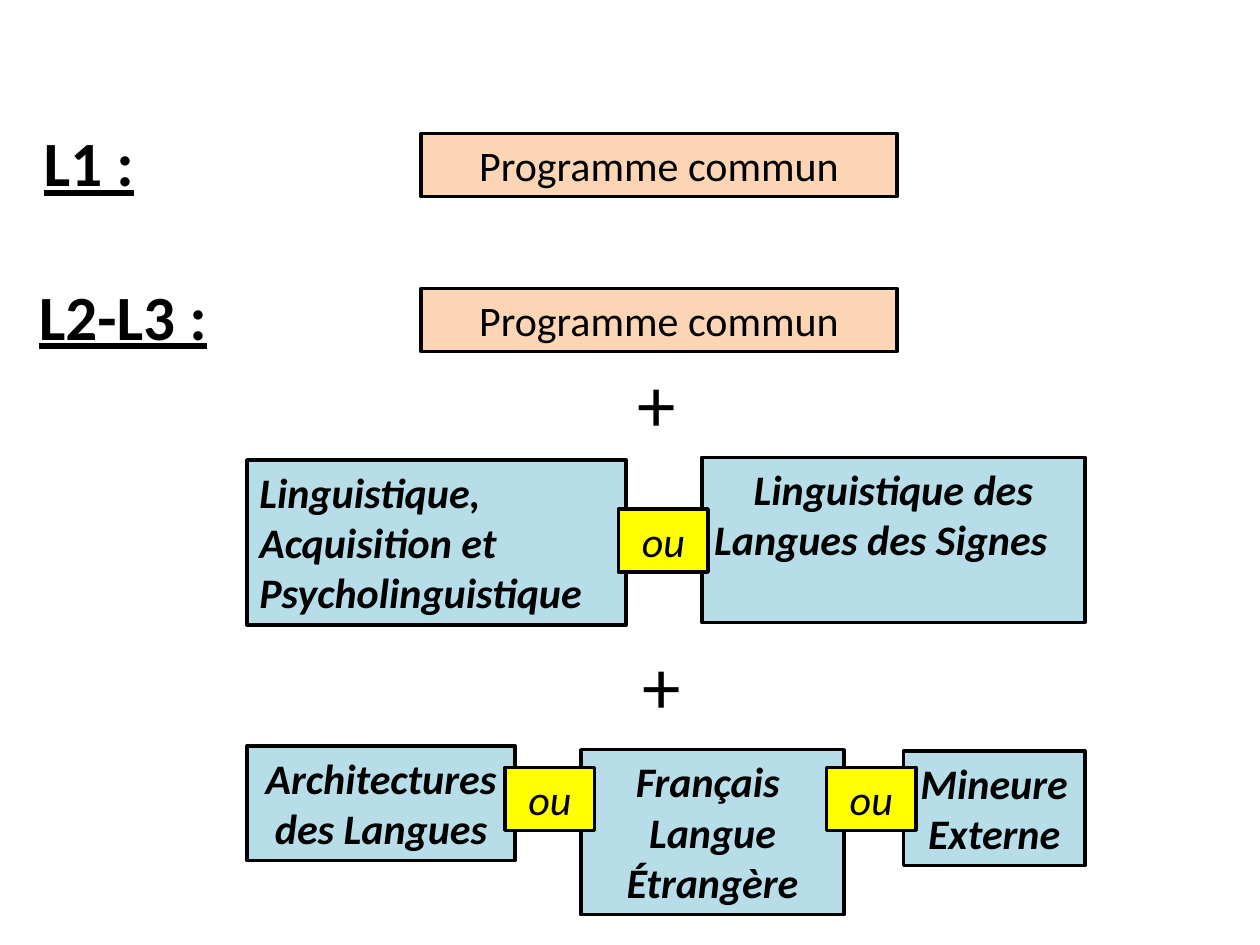
from pptx import Presentation
from pptx.dml.color import RGBColor
from pptx.enum.shapes import MSO_SHAPE as Shape
from pptx.enum.text import MSO_ANCHOR as Anchor, MSO_AUTO_SIZE as Auto, PP_ALIGN as Align
from pptx.util import Inches, Pt

WIDE, HIGH = Inches(10), Inches(7.5)
COLS, ROWS = 100, 75
BLACK, WHITE = "000000", "FFFFFF"
PEACH, BLUE, YELLOW = "FCD5B5", "B7DEE8", "FFFF00"


def paint(color, code):
    color.rgb = RGBColor.from_string(code)


def place(col, row, cols, rows):
    return (round(col * WIDE / COLS), round(row * HIGH / ROWS),
            round(cols * WIDE / COLS), round(rows * HIGH / ROWS))


def write(shape, text, size, align=Align.CENTER, wrap=True, **style):
    frame = shape.text_frame
    frame.word_wrap = wrap
    frame.auto_size = Auto.SHAPE_TO_FIT_TEXT
    frame.vertical_anchor = Anchor.TOP
    frame.text = text
    for para in frame.paragraphs:
        para.alignment = align
        font = para.font
        font.name, font.size = "Calibri", Pt(size)
        paint(font.color, BLACK)
        for name, value in style.items():
            setattr(font, name, value)


def block(slide, text, area, fill, size=24, edge=True, **style):
    shape = slide.shapes.add_shape(Shape.RECTANGLE, *place(*area))
    shape.shadow.inherit = False
    shape.fill.solid()
    paint(shape.fill.fore_color, fill)
    if edge:
        paint(shape.line.color, BLACK)
        shape.line.width = Pt(2)
    else:
        shape.line.fill.background()
    write(shape, text, size, **style)


def common(slide, row):
    block(slide, "Programme commun", (33.4, row, 37.8, 5), PEACH)


def course(slide, text, area, align=Align.CENTER):
    block(slide, text, area, BLUE, align=align, bold=True, italic=True)


def plus(slide, col, row):
    block(slide, "+", (col, row, 7.1, 8.4), WHITE, size=44, edge=False)


def either(slide, col, row):
    block(slide, "ou", (col, row, 7.1, 5), YELLOW, italic=True)


def level(slide, text, area):
    label = slide.shapes.add_textbox(*place(*area))
    write(label, text, 36, wrap=False, bold=True, underline=True)


def main():
    deck = Presentation()
    deck.slide_width, deck.slide_height = WIDE, HIGH
    slide = deck.slides.add_slide(deck.slide_layouts[6])

    level(slide, "L1 :", (1.7, 9.3, 10.7, 7.1))
    common(slide, 10.6)

    level(slide, "L2-L3 :", (1.8, 21.5, 15.9, 7.1))
    plus(slide, 48.6, 27.7)
    common(slide, 22.9)

    course(slide, "Linguistique des Langues des Signes\t", (55.7, 36.3, 30.4, 13.1))
    course(slide, "Linguistique, Acquisition et Psycholinguistique",
           (19.6, 36.5, 30.1, 13.1), Align.LEFT)
    either(slide, 49.1, 40.4)

    plus(slide, 49, 50.1)
    course(slide, "Architectures des Langues", (19.6, 59.2, 21.3, 9.1))
    course(slide, "Français \nLangue Étrangère", (46.1, 59.5, 20.9, 13.1))
    course(slide, "Mineure Externe", (71.7, 59.6, 14.4, 9.1))
    for col in (40.1, 65.6):
        either(slide, col, 60.9)

    deck.save("out.pptx")


if __name__ == "__main__":
    main()
